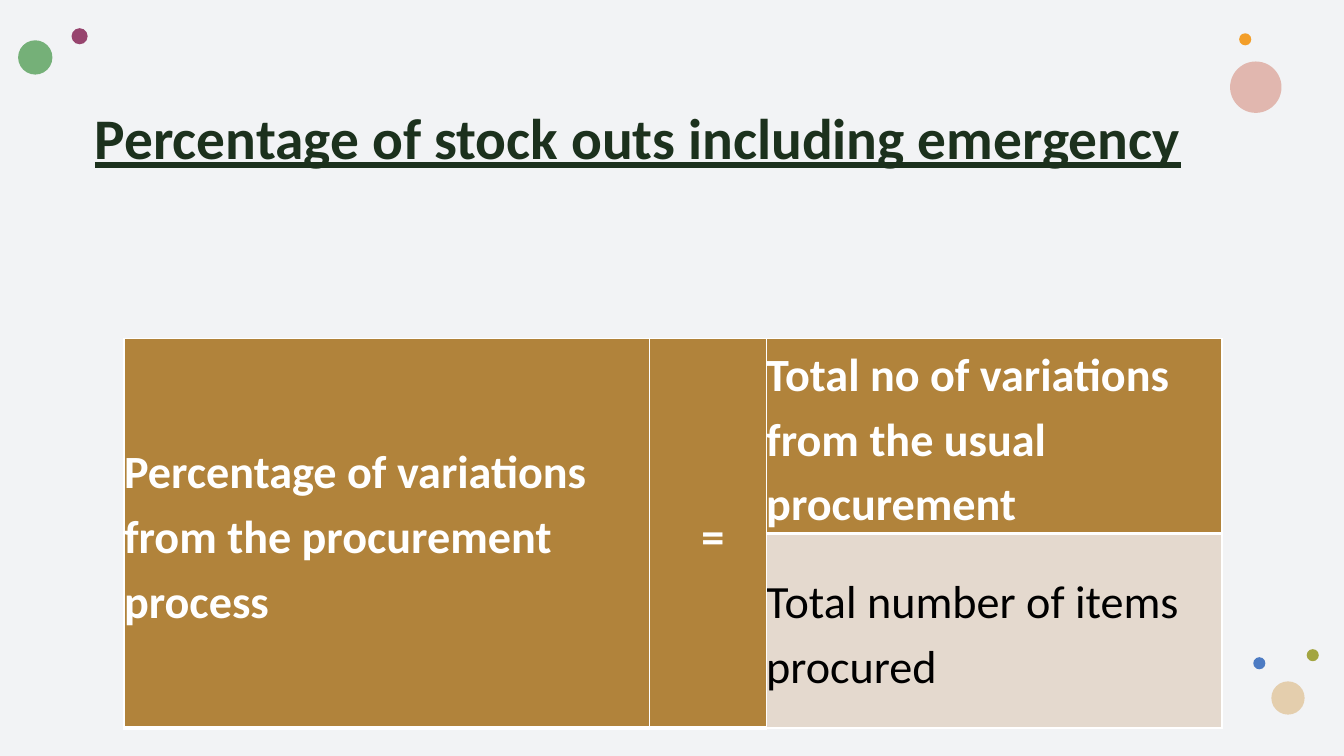
"""Builds the slide on the percentage of stock outs."""
from dataclasses import dataclass

import pptx
import pptx.dml.color
import pptx.enum.shapes
import pptx.enum.text
import pptx.oxml
import pptx.oxml.ns
import pptx.util
from pptx.util import Inches


@dataclass(frozen=True)
class Theme:
    """Colours, font and type sizes of the slide."""
    font: str = "Calibri"
    background: str = "F2F3F5"
    title: str = "1C311D"
    header_fill: str = "B1833B"
    body_fill: str = "E4D9CE"
    light: str = "FFFFFF"
    dark: str = "000000"
    title_size: int = 41
    table_size: int = 33


THEME = Theme()

DOTS = [
    (0.71, 0.28, 0.16, "97446E", 100),
    (12.2, 0.61, 0.51, "DBA194", 72),
    (12.29, 0.33, 0.12, "F39E29", 100),
    (0.18, 0.4, 0.34, "75B078", 100),
    (12.96, 6.44, 0.12, "A3A541", 100),
    (12.61, 6.76, 0.33, "E4CEAD", 100),
    (12.43, 6.52, 0.12, "4D7BC3", 100),
]


def set_fill(fill, colour):
    """Give a fill one solid colour."""
    fill.solid()
    fill.fore_color.rgb = pptx.dml.color.RGBColor.from_string(colour)


def format_runs(paragraph, size, colour, bold, underline=False):
    """Format all runs of a paragraph alike."""
    for run in paragraph.runs:
        run.font.name = THEME.font
        run.font.size = pptx.util.Pt(size)
        run.font.bold = bold
        run.font.underline = underline
        run.font.color.rgb = pptx.dml.color.RGBColor.from_string(colour)


def add_dot(slide, left, top, diameter, colour, opacity):
    """Add a decorative circle."""
    dot = slide.shapes.add_shape(
        pptx.enum.shapes.MSO_SHAPE.OVAL,
        Inches(left), Inches(top), Inches(diameter), Inches(diameter))
    dot.shadow.inherit = False
    dot.line.fill.background()
    set_fill(dot.fill, colour)
    if opacity < 100:
        colour_element = dot.fill._xPr.find(".//" + pptx.oxml.ns.qn("a:srgbClr"))
        alpha = pptx.oxml.parse_xml(
            f'<a:alpha {pptx.oxml.ns.nsdecls("a")} val="{opacity * 1000}"/>')
        colour_element.append(alpha)


def set_title(slide, text):
    """Place and format the title placeholder."""
    title = slide.shapes.title
    title.left, title.top = Inches(0.84), Inches(1.04)
    title.width, title.height = Inches(11.78), Inches(1.97)
    frame = title.text_frame
    frame.text = text
    frame.word_wrap = True
    frame.auto_size = pptx.enum.text.MSO_AUTO_SIZE.NONE
    frame.vertical_anchor = pptx.enum.text.MSO_ANCHOR.TOP
    paragraph = frame.paragraphs[0]
    paragraph.alignment = pptx.enum.text.PP_ALIGN.LEFT
    paragraph.line_spacing = 0.9
    format_runs(paragraph, THEME.title_size, THEME.title, True, True)


def set_borders(cell, bottom_width):
    """Draw the light borders of a table cell."""
    properties = cell._tc.get_or_add_tcPr()
    widths = {"lnL": 1, "lnR": 1, "lnT": 1, "lnB": bottom_width}
    for index, (side, width) in enumerate(widths.items()):
        border = pptx.oxml.parse_xml(
            f'<a:{side} {pptx.oxml.ns.nsdecls("a")} w="{pptx.util.Pt(width)}">'
            f'<a:solidFill><a:srgbClr val="{THEME.light}"/></a:solidFill></a:{side}>')
        properties.insert(index, border)


def style_cell(cell, header):
    """Format a cell as header or body."""
    set_fill(cell.fill, THEME.header_fill if header else THEME.body_fill)
    set_borders(cell, 3 if header else 1)
    cell.margin_left = cell.margin_right = cell.margin_top = cell.margin_bottom = 0
    cell.vertical_anchor = pptx.enum.text.MSO_ANCHOR.MIDDLE
    paragraph = cell.text_frame.paragraphs[0]
    paragraph.line_spacing = 1.15
    paragraph.space_after = pptx.util.Pt(10)
    format_runs(paragraph, THEME.table_size,
                THEME.light if header else THEME.dark, header)


def add_formula_table(slide, result, numerator, denominator):
    """Add a table that shows a result as a fraction."""
    table = slide.shapes.add_table(
        2, 3, Inches(1.23), Inches(3.36), Inches(10.89), Inches(3.84)).table
    table.first_row = table.horz_banding = False
    for column, width in zip(table.columns, (5.21, 1.16, 4.52)):
        column.width = Inches(width)
    for row in table.rows:
        row.height = Inches(1.92)
    for column in (0, 1):
        table.cell(0, column).merge(table.cell(1, column))
    for column, text in enumerate((result, "=", numerator)):
        table.cell(0, column).text = text
    table.cell(1, 2).text = denominator
    for row in range(2):
        for column in range(3):
            style_cell(table.cell(row, column), header=(row, column) != (1, 2))
    equals = table.cell(0, 1)
    equals.margin_left = Inches(0.1)
    equals.text_frame.paragraphs[0].alignment = pptx.enum.text.PP_ALIGN.CENTER


def main():
    """Build and save the presentation."""
    presentation = pptx.Presentation()
    presentation.slide_width = Inches(13.33)
    presentation.slide_height = Inches(7.5)
    slide = presentation.slides.add_slide(presentation.slide_layouts[5])
    set_fill(slide.background.fill, THEME.background)
    for dot in DOTS:
        add_dot(slide, *dot)
    set_title(slide, "Percentage of stock outs including emergency")
    add_formula_table(
        slide,
        "Percentage of variations from the procurement process",
        "Total no of variations from the usual procurement",
        "Total number of items procured")
    presentation.save("out.pptx")


if __name__ == "__main__":
    main()
